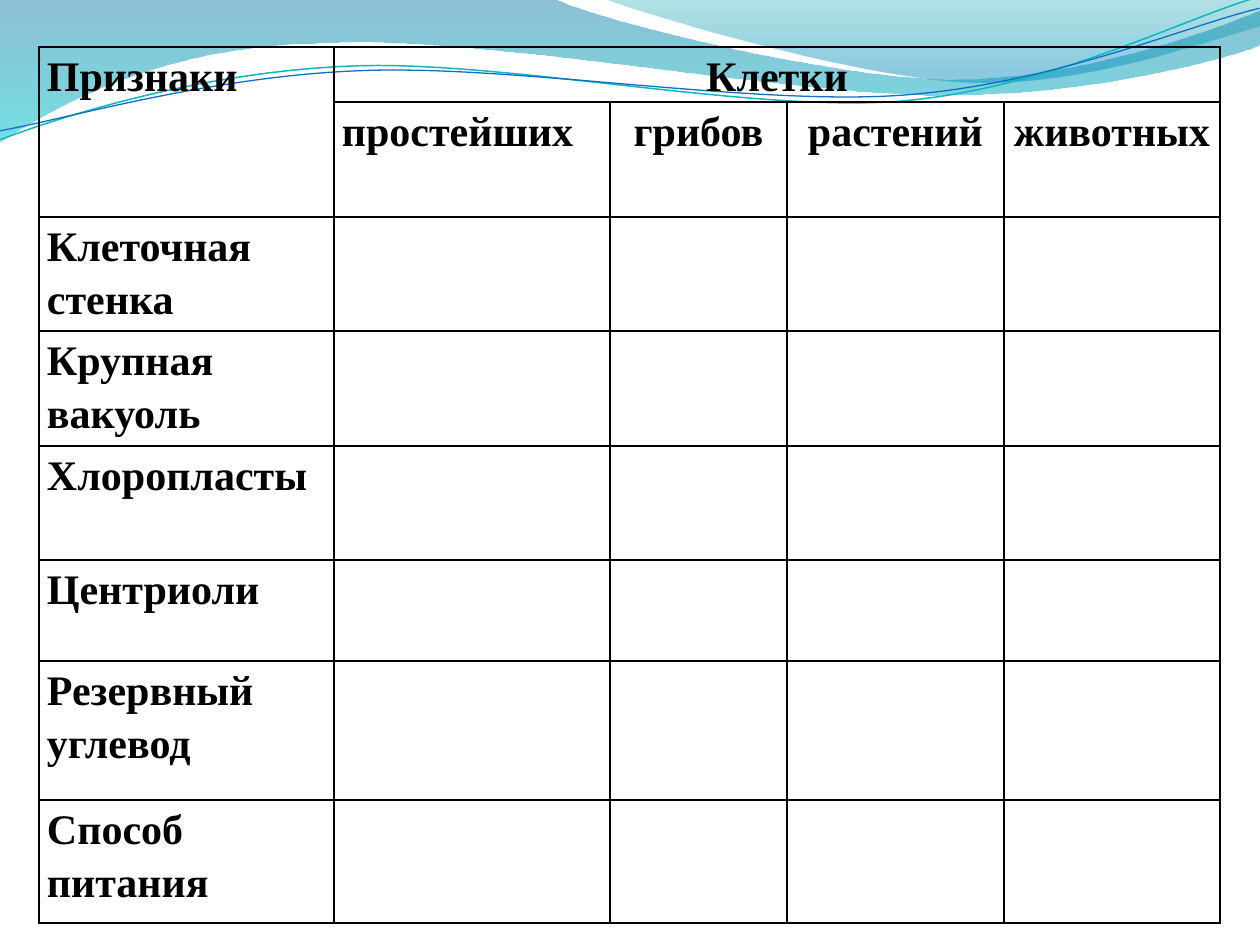
from lxml.etree import SubElement
from pptx import Presentation
from pptx.dml.color import RGBColor
from pptx.enum.text import PP_ALIGN
from pptx.oxml.ns import qn
from pptx.util import Emu, Pt

SCALE = 914400 / 126  # EMU per px
COLORS = {"black": "000000", "blue": "0074A1", "cyan": "00C6CF", "teal": "00A1A9",
          "sky": "008BBF", "thin_teal": "0AB8BF", "thin_blue": "0F6FC6"}


def px(n):
    return Emu(round(n * SCALE))


def add_curve(s, start, segments, close):
    """Draw a path whose segments hold one point (line) or three (cubic curve)."""
    fb = s.shapes.build_freeform(*start, scale=SCALE)
    fb.add_line_segments([pt for seg in segments for pt in seg], close=close)
    sp = fb.convert_to_shape()
    sp.shadow.inherit = False
    steps = iter(list(sp._element.iter(qn("a:lnTo"))))
    for seg in segments:
        first, *others = [next(steps) for _ in seg]
        if others:
            first.tag = qn("a:cubicBezTo")
        for step in others:
            first.append(step[0])
            step.getparent().remove(step)
    return sp


prs = Presentation()
prs.slide_width, prs.slide_height = px(1260), px(945)
s = prs.slides.add_slide(prs.slide_layouts[6])

# Translucent bands: start, segments, gradient stops (colour, position, opacity %)
bands = [
    ((-1, 0),
     [[(554, -1)],
      [(600, 21), (837, 79), (955, 79)], [(1075, 79), (1207, 33), (1260, 11)],
      [(1261, 45)],
      [(1239, 55), (1096, 96), (940, 95)], [(784, 95), (481, 35), (324, 43)],
      [(163, 45), (58, 105), (-1, 142)]],
     [("blue", 0, 45), ("cyan", 1, 55)]),
    ((604, -1),
     [[(641, 14), (859, 78), (969, 82)], [(1079, 87), (1211, 40), (1260, 26)],
      [(1260, 0)]],
     [("teal", 0, 30), ("sky", 0.8, 45)]),
]
for start, segments, stops in bands:
    sp = add_curve(s, start, segments, True)
    sp.line.fill.background()
    sp.fill.gradient()
    sp.fill.gradient_angle = 270
    for stop, (color, position, _) in zip(sp.fill.gradient_stops, stops):
        stop.color.rgb = RGBColor.from_string(COLORS[color])
        stop.position = position
    for clr, (_, _, opacity) in zip(sp._element.spPr.iter(qn("a:srgbClr")), stops):
        SubElement(clr, qn("a:alpha"), val=str(opacity * 1000))

# Thin wave lines, tilted slightly
waves = [
    ((-2, 110),
     [[(59, 90), (200, 52), (350, 53)], [(499, 53), (745, 118), (896, 114)],
      [(1048, 109), (1184, 45), (1260, 27)]], "thin_teal", 0.85),
    ((-2, 101),
     [[(57, 94), (207, 57), (357, 58)], [(509, 58), (750, 112), (902, 108)],
      [(1052, 104), (1188, 52), (1262, 38)]], "thin_blue", 0.75),
]
for start, segments, color, width in waves:
    sp = add_curve(s, start, segments, False)
    sp.rotation = 357.3
    sp.fill.background()
    sp.line.color.rgb = RGBColor.from_string(COLORS[color])
    sp.line.width = Pt(width)

# Table
cols = [295, 276, 177, 217, 216]
rows = [55, 115, 114, 115, 114, 101, 139, 123]
texts = [
    ["Признаки", "Клетки"],
    ["", "простейших", "грибов", "растений", "животных"],
    ["Клеточная стенка"],
    ["Крупная вакуоль"],
    ["Хлоропласты"],
    ["Центриоли"],
    ["Резервный углевод"],
    ["Способ питания"],
]
centered = {"Клетки", "грибов", "растений", "животных"}

table = s.shapes.add_table(len(rows), len(cols), px(39), px(47),
                           px(sum(cols)), px(sum(rows))).table
table.first_row = table.horz_banding = False
for col, width in zip(table.columns, cols):
    col.width = px(width)
for row, height in zip(table.rows, rows):
    row.height = px(height)

for cell in table.iter_cells():
    tcPr = cell._tc.get_or_add_tcPr()
    for side in ("lnL", "lnR", "lnT", "lnB"):
        ln = SubElement(tcPr, qn(f"a:{side}"), w=str(Pt(1)))
        SubElement(SubElement(ln, qn("a:solidFill")), qn("a:srgbClr"), val=COLORS["black"])
    cell.fill.background()
    cell.margin_left = cell.margin_right = px(8)
    cell.margin_top = cell.margin_bottom = 0

table.cell(0, 0).merge(table.cell(1, 0))
table.cell(0, 1).merge(table.cell(0, 4))

for i, line in enumerate(texts):
    for j, text in enumerate(line):
        if not text:
            continue
        p = table.cell(i, j).text_frame.paragraphs[0]
        p.line_spacing = 1.15
        p.alignment = PP_ALIGN.CENTER if text in centered else PP_ALIGN.LEFT
        r = p.add_run()
        r.text = text
        r.font.name = "Times New Roman"
        r.font.size = Pt(24)
        r.font.bold = True
        r.font.color.rgb = RGBColor.from_string(COLORS["black"])

prs.save("out.pptx")
